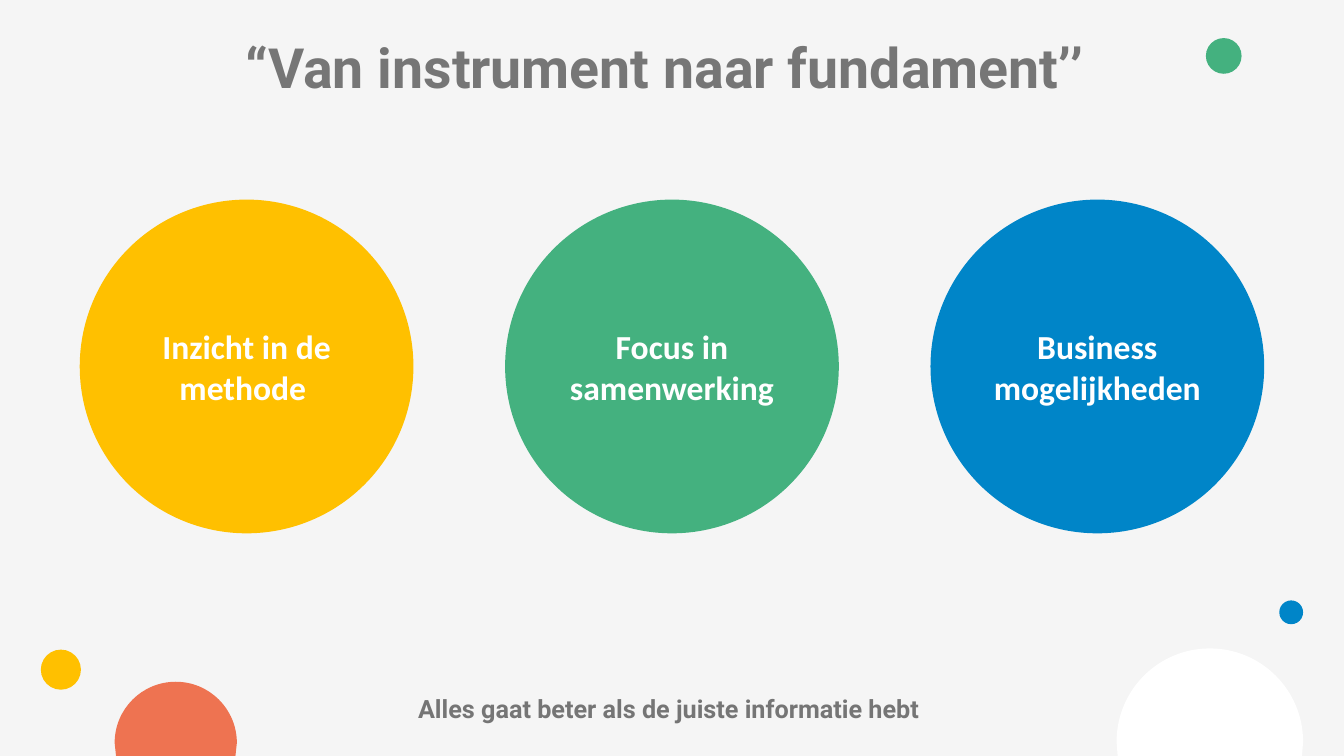
import math

import lxml.etree
import pptx
import pptx.dml.color
import pptx.enum.shapes
import pptx.enum.text
import pptx.oxml.ns
import pptx.util

Cm = pptx.util.Cm
qn = pptx.oxml.ns.qn
WIDE, HIGH = 33.87, 19.05
GREY, WHITE = "F5F5F5", "FFFFFF"
GOLD, GREEN, BLUE, CORAL = "FFC000", "44B17F", "0085C8", "EE7351"

# Text, left, top, width, height, format
LINES = [
    ("“Van instrument naar fundament’’ ", 1.03, 0.91, 31.8, 1.75,
     dict(size=39.6, tone="767676", anchor="MIDDLE", lead=0.9)),
    ("Alles gaat beter als de juiste informatie hebt ", 8.46, 17.35, 16.94, 1.02,
     dict(size=18, tone="757575")),
]
THEMES = [
    ("Inzicht in de methode ", GOLD),
    ("Focus in samenwerking", GREEN),
    ("Business mogelijkheden", BLUE),
]
# Left, top, diameter, colour
DOTS = [
    (1.03, 16.37, 1.01, GOLD),
    (30.39, 0.96, 0.9, GREEN),
    (32.24, 15.13, 0.6, BLUE),
]
# Centre x, centre y, radius, colour
DOMES = [
    (30.49, 18.69, 2.35, WHITE),
    (4.43, 18.72, 1.54, CORAL),
]
SIZE, TOP = 8.41, 5.03
STEP = 10.72
BEND = 0.5523  # handle length of a quarter circle, per radius


def paint(fill, tone):
    fill.solid()
    fill.fore_color.rgb = pptx.dml.color.RGBColor.from_string(tone)


def plain(shape, tone):
    """Give a shape a flat fill, without line or shadow."""
    paint(shape.fill, tone)
    shape.line.fill.background()
    shape.shadow.inherit = False
    return shape


def disc(slide, left, top, size, tone):
    kind = pptx.enum.shapes.MSO_SHAPE.OVAL
    box = (Cm(n) for n in (left, top, size, size))
    return plain(slide.shapes.add_shape(kind, *box), tone)


def curve(line, handles):
    """Turn a straight segment into a Bézier curve with two handles."""
    line.tag = qn("a:cubicBezTo")
    for i, (x, y) in enumerate(handles):
        spot = lxml.etree.Element(qn("a:pt"), x=str(Cm(x)), y=str(Cm(y)))
        line.insert(i, spot)


def dome(slide, x, y, size, tone):
    """Draw the part of a circle that lies above the bottom edge."""
    half = math.sqrt(size ** 2 - (HIGH - y) ** 2)
    peak = (x, y - size)
    spots = [(x + size, y), (x + half, HIGH), (x - half, HIGH), (x - size, y), peak]
    pen = slide.shapes.build_freeform(Cm(peak[0]), Cm(peak[1]))
    pen.add_line_segments([(Cm(a), Cm(b)) for a, b in spots], close=True)
    shape = plain(pen.convert_to_shape(), tone)

    sides = list(shape.element.iter(qn("a:lnTo")))
    reach = size * BEND
    rise = size - reach
    arcs = [
        (0, [(size + reach, 0), (2 * size, rise)]),
        (4, [(0, rise), (rise, 0)]),
    ]
    for i, handles in arcs:
        line = lxml.etree.SubElement(sides[i].getparent(), qn("a:cubicBezTo"))
        sides[i].addprevious(line)
        line.append(sides[i][0])
        sides[i].getparent().remove(sides[i])
        curve(line, handles)


def write(shape, text, size, tone, font="Roboto", anchor="TOP", lead=1.0):
    frame = shape.text_frame
    frame.word_wrap = True
    frame.vertical_anchor = pptx.enum.text.MSO_ANCHOR[anchor]
    para = frame.paragraphs[0]
    para.alignment = pptx.enum.text.PP_ALIGN.CENTER
    para.line_spacing = lead
    run = para.add_run()
    run.text = text
    run.font.name = font
    run.font.size = pptx.util.Pt(size)
    run.font.bold = True
    paint(run.font.fill, tone)


def main():
    deck = pptx.Presentation()
    deck.slide_width, deck.slide_height = Cm(WIDE), Cm(HIGH)
    slide = deck.slides.add_slide(deck.slide_layouts[6])
    paint(slide.background.fill, GREY)

    for item in DOMES:
        dome(slide, *item)
    for item in DOTS:
        disc(slide, *item)

    for text, *box, look in LINES:
        area = slide.shapes.add_textbox(*(Cm(n) for n in box))
        write(area, text, **look)

    first = (WIDE - SIZE - STEP * (len(THEMES) - 1)) / 2
    for i, (text, tone) in enumerate(THEMES):
        ball = disc(slide, first + i * STEP, TOP, SIZE, tone)
        write(ball, text, 24, WHITE, font="Calibri", anchor="MIDDLE")

    deck.save("out.pptx")


if __name__ == "__main__":
    main()
